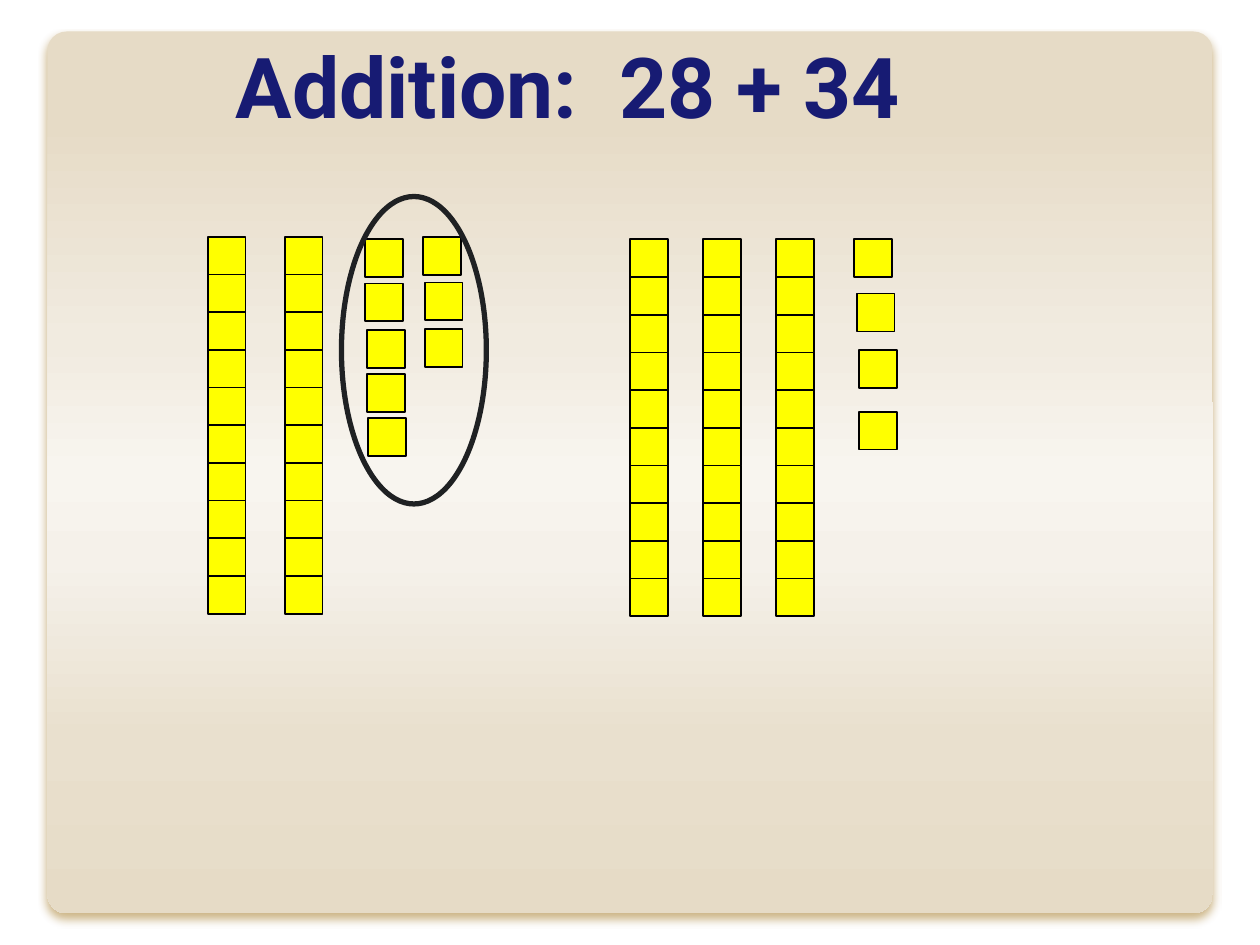
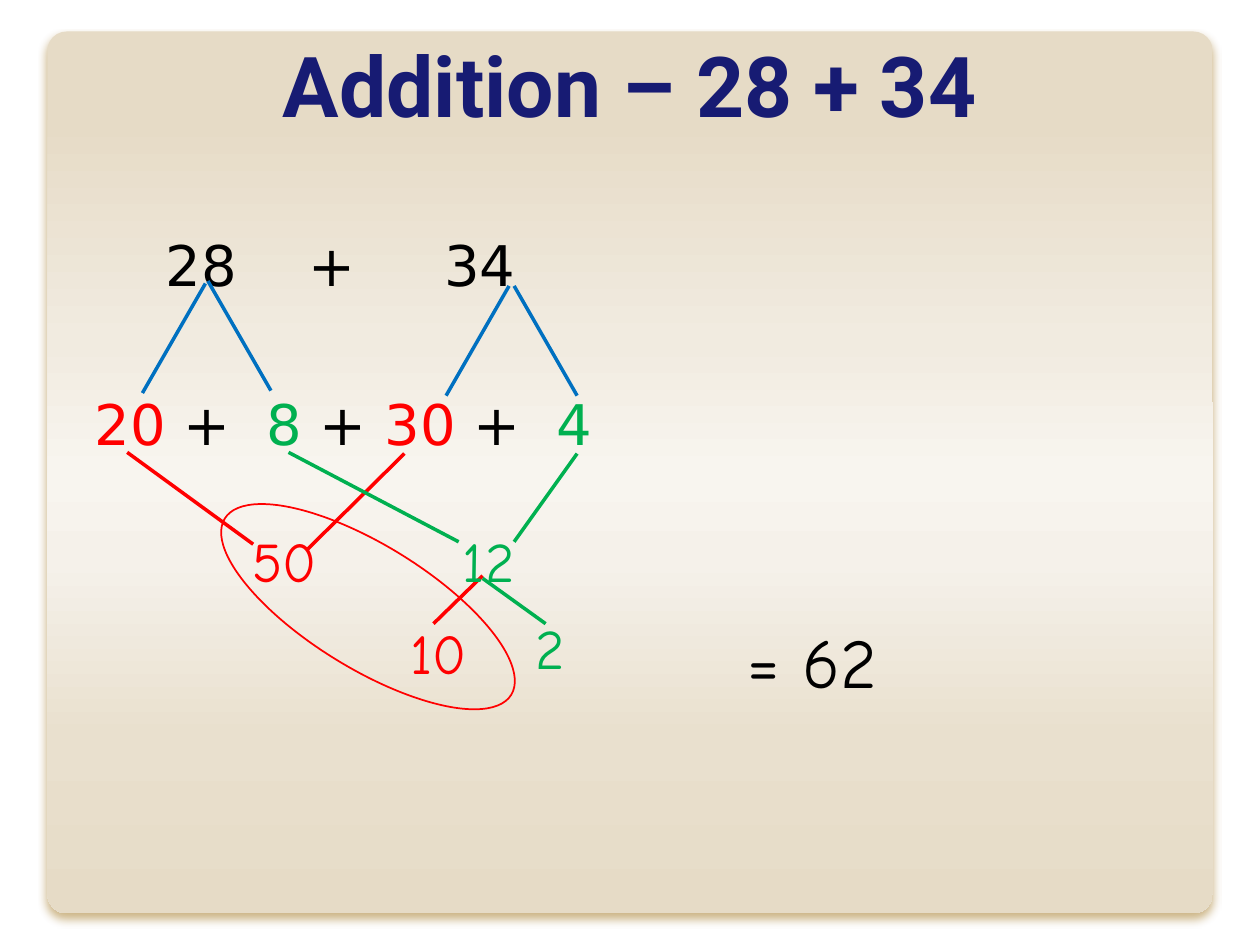
from collections import namedtuple

from lxml import etree
from pptx import Presentation
from pptx.dml.color import RGBColor
from pptx.enum import shapes, text
from pptx.oxml import ns
from pptx.util import Pt

Box = namedtuple("Box", "left top width height")

COLOURS = {
    "navy": "171B73",
    "black": "000000",
    "ring": "1F2123",
    "yellow": "FFFF00",
    "red": "FF0000",
    "green": "00B050",
    "blue": "0070C0",
    "shadow": "956400",
}
PANEL_STOPS = [(0, "E6DBC6"), (10, "E6DBC6"), (35, "F1EBE0"), (50, "F8F5EF"),
               (60, "F5F1EA"), (80, "E9E0CE"), (100, "E6DBC6")]
TITLE_FONT, SUM_FONT, ANSWER_FONT = "Roboto", "DejaVu Sans", "Comic Neue"
CUBE = 21.6
CUBE_PITCH = 21.53


def colour(name):
    return RGBColor.from_string(COLOURS[name])


def inside(box, left, top, width=0, height=0):
    return Box(box.left + left, box.top + top, width, height)


def add_xml(parent, tag, **attributes):
    return etree.SubElement(parent, ns.qn(tag), {key: str(value) for key, value in attributes.items()})


# Basic parts
def add_preset(parent, kind, box, fill=None, line=None, weight=1):
    shape = parent.shapes.add_shape(kind, *map(Pt, box))
    shape.shadow.inherit = False
    if fill:
        shape.fill.solid()
        shape.fill.fore_color.rgb = colour(fill)
    else:
        shape.fill.background()
    if line:
        shape.line.color.rgb = colour(line)
        shape.line.width = Pt(weight)
    else:
        shape.line.fill.background()
    return shape


def add_line(page, box, start, end, name):
    points = [Pt(value) for x, y in (start, end) for value in (box.left + x, box.top + y)]
    line = page.shapes.add_connector(shapes.MSO_CONNECTOR.STRAIGHT, *points)
    line.line.color.rgb = colour(name)
    line.line.width = Pt(2)
    add_xml(line._element.spPr, "a:effectLst")


def add_frame(page, box, margin=3.6):
    frame = page.shapes.add_textbox(*map(Pt, box)).text_frame
    frame.word_wrap = True
    frame.margin_left = frame.margin_right = Pt(margin)
    frame.margin_top = frame.margin_bottom = Pt(margin)
    return frame


def style(para, font, size, name, bold=False):
    para.font.name = font
    para.font.size = Pt(size)
    para.font.bold = bold
    para.font.color.rgb = colour(name)


def add_label(page, box, words, font, size, name, bold=False):
    frame = add_frame(page, box)
    frame.vertical_anchor = text.MSO_ANCHOR.MIDDLE
    para = frame.paragraphs[0]
    para.text = words
    para.alignment = text.PP_ALIGN.CENTER
    style(para, font, size, name, bold)


# Shared panel and title
def add_panel(page, box):
    panel = add_preset(page, shapes.MSO_SHAPE.ROUNDED_RECTANGLE, box)
    panel.adjustments[0] = 0.022
    properties = panel._element.spPr
    gradient = etree.Element(ns.qn("a:gradFill"), rotWithShape="1")
    stops = add_xml(gradient, "a:gsLst")
    for position, value in PANEL_STOPS:
        add_xml(add_xml(stops, "a:gs", pos=position * 1000), "a:srgbClr", val=value)
    add_xml(gradient, "a:lin", ang=90 * 60000, scaled=0)
    properties.replace(properties.find(ns.qn("a:noFill")), gradient)
    effects = properties.find(ns.qn("a:effectLst"))
    shadow = add_xml(effects, "a:outerShdw", blurRad=Pt(5), dist=Pt(3.6),
                     dir=90 * 60000, algn="tl", rotWithShape=0)
    add_xml(add_xml(shadow, "a:srgbClr", val=COLOURS["shadow"]), "a:alpha", val=47000)


def add_page(deck, title, title_box):
    page = deck.slides.add_slide(deck.slide_layouts[6])
    add_panel(page, Box(27, 18, 666, 504))
    add_label(page, title_box, title, TITLE_FONT, 48, "navy", bold=True)
    return page


# Tens rods and single cubes
def add_cube(parent, box, left, top):
    add_preset(parent, shapes.MSO_SHAPE.RECTANGLE, inside(box, left, top, CUBE, CUBE),
               "yellow", "black")


def add_number(page, box, tens, rod_gap, ones):
    for rod in range(tens):
        group = page.shapes.add_group_shape()
        for cube in range(10):
            add_cube(group, box, rod * rod_gap, cube * CUBE_PITCH)
    for left, top in ones:
        add_cube(page, box, left, top)


def build_cubes_page(deck):
    page = add_page(deck, "Addition:  28 + 34", Box(54, 12, 541, 73.5))
    add_number(page, Box(118.8, 135.4, 145, 215.4), 2, 43.9,
               [(90, 1.4), (90, 26.6), (91, 53.2), (91, 78.4), (91.5, 103.6),
                (123, 0), (124, 26), (124, 52.6)])
    add_number(page, Box(360, 136.8, 153, 215.4), 3, 41.8,
               [(128.2, 0), (129.6, 31), (131, 63.4), (131, 98.6)])
    add_preset(page, shapes.MSO_SHAPE.OVAL, Box(195.1, 112.3, 82.8, 175.7),
               line="ring", weight=3)


# Sum split into tens and ones
def set_tabs(para, positions):
    tabs = add_xml(para._p.get_or_add_pPr(), "a:tabLst")
    for position in positions:
        add_xml(tabs, "a:tab", pos=Pt(position), algn="l")


def add_sum_rows(page, box):
    frame = add_frame(page, box, margin=0)
    numbers = frame.paragraphs[0]
    numbers.text = "\t28\t+\t34"
    set_tabs(numbers, [40.7, 122.1, 199.8])
    parts = frame.add_paragraph()
    parts.space_before = Pt(52.2)
    set_tabs(parts, [98.1, 263.8])
    for words, name in [("20", "red"), (" +\t", "black"), ("8", "green"), (" + ", "black"),
                        ("30", "red"), (" +\t", "black"), ("4", "green")]:
        span = parts.add_run()
        span.text = words
        span.font.color.rgb = colour(name)
    for para in frame.paragraphs:
        style(para, SUM_FONT, 32, "black")


def add_split_lines(page, box):
    for name, start, end in [
        # 28 and 34 into tens and ones
        ("blue", (81.4, 36), (45.4, 98.6)),
        ("blue", (82.8, 34.6), (118.8, 97.2)),
        ("blue", (254.9, 37.4), (218.9, 100.1)),
        ("blue", (257.8, 37.4), (293.8, 100.1)),
        # tens to 50, ones to 12
        ("red", (36.7, 132.5), (108.7, 185)),
        ("red", (195.1, 133.2), (139, 188.6)),
        ("green", (128.9, 132.5), (226.1, 183.6)),
        ("green", (293.8, 133.2), (257.8, 183.6)),
        # 12 into 10 and 2
        ("red", (239.8, 203), (211.7, 230.4)),
        ("green", (239.8, 204.5), (275.8, 230.4)),
    ]:
        add_line(page, box, start, end, name)


def add_results(page, box):
    for words, name, left, top in [("50", "red", 82.8, 171.4), ("12", "green", 199.4, 171.4),
                                   ("10", "red", 170.6, 223.9), ("2", "green", 234.7, 221)]:
        add_label(page, inside(box, left, top, 87.8, 45.4), words, ANSWER_FONT, 32, name)
    add_label(page, inside(box, 362.2, 223.9, 131.8, 55.4), "= 62", ANSWER_FONT, 40, "black")
    ring = add_preset(page, shapes.MSO_SHAPE.OVAL, inside(box, 139, 124.6, 70.6, 192.2),
                      line="red")
    ring.rotation = 301.6


def build_split_page(deck):
    page = add_page(deck, "Addition – 28 + 34", Box(36, 3, 648, 90))
    work = Box(36, 126, 648, 399)
    add_sum_rows(page, inside(work, 18, 6, 612, 130))
    add_split_lines(page, work)
    add_results(page, work)


def main():
    deck = Presentation()
    deck.slide_width, deck.slide_height = Pt(720), Pt(540)
    build_cubes_page(deck)
    build_split_page(deck)
    deck.save("out.pptx")


if __name__ == "__main__":
    main()
